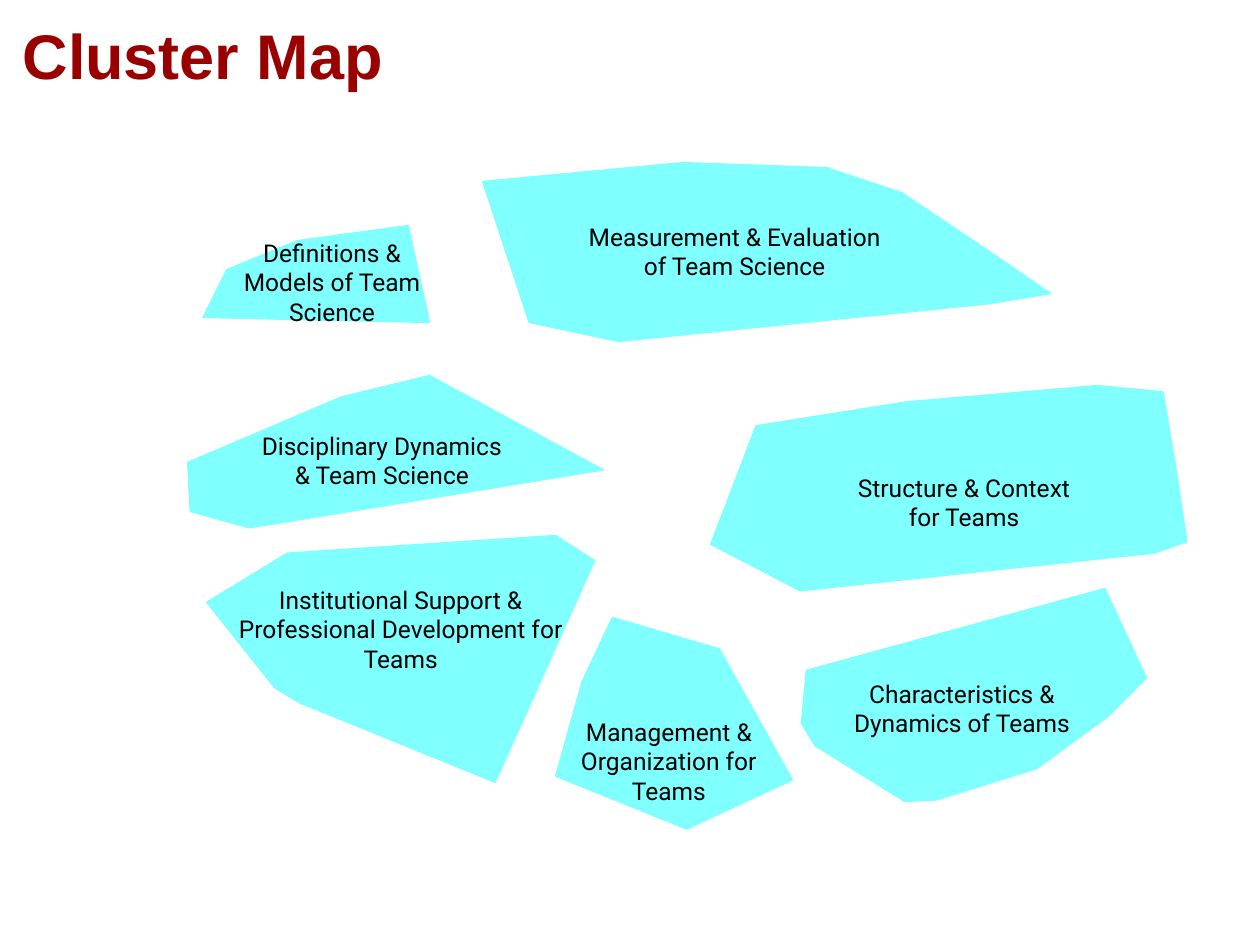
import pptx
import pptx.dml.color
import pptx.enum.text
import pptx.util

Cm = pptx.util.Cm
Pt = pptx.util.Pt
RGBColor = pptx.dml.color.RGBColor

DARK_RED = RGBColor(0x99, 0x00, 0x00)
CYAN = RGBColor(0x80, 0xFF, 0xFF)
BLACK = RGBColor(0x00, 0x00, 0x00)
OUTLINE_UNIT = Cm(2.54) / 100

CLUSTERS = [
    ("Management & Organization for Teams", (11.02, 14.45, 4.93, 1.8),
     [(441, 616), (545, 658), (629, 619), (571, 515), (486, 490), (462, 541)]),
    ("Characteristics & Dynamics of Teams", (16.97, 13.69, 4.85, 1.19),
     [(636, 574), (647, 592), (718, 636), (743, 635), (823, 610), (879, 569),
      (910, 538), (877, 467), (640, 532)]),
    ("Definitions & Models of Team Science", (4.47, 4.8, 4.45, 1.8),
     [(161, 252), (341, 256), (324, 179), (236, 191), (180, 214)]),
    ("Institutional Support & Professional Development for Teams",
     (4.7, 11.79, 6.76, 1.8),
     [(164, 478), (218, 546), (238, 558), (393, 621), (472, 445), (441, 425),
      (228, 439)]),
    ("Disciplinary Dynamics & Team Science", (5.11, 8.69, 5.18, 1.19),
     [(149, 367), (151, 406), (198, 419), (479, 373), (341, 298), (271, 315)]),
    ("Measurement & Evaluation of Team Science", (11.66, 4.47, 6.3, 1.19),
     [(383, 144), (420, 256), (491, 271), (786, 241), (834, 233), (780, 196),
      (716, 153), (656, 133), (542, 129)]),
    ("Structure & Context for Teams", (17.25, 9.53, 4.37, 1.19),
     [(564, 432), (635, 469), (916, 439), (942, 430), (933, 370), (923, 311),
      (871, 306), (719, 319), (600, 338)]),
]


class ClusterMap:
    title_font = "Arial"
    label_font = "Roboto"

    def __init__(self, slide):
        self.slide = slide

    def format_text(self, paragraph, name, size, color, alignment):
        paragraph.alignment = alignment
        paragraph.font.name = name
        paragraph.font.size = Pt(size)
        paragraph.font.color.rgb = color

    def title(self, text, box):
        shape = self.slide.shapes.title
        shape.left, shape.top, shape.width, shape.height = map(Cm, box)
        frame = shape.text_frame
        frame.text = text
        frame.vertical_anchor = pptx.enum.text.MSO_ANCHOR.MIDDLE
        paragraph = frame.paragraphs[0]
        self.format_text(paragraph, self.title_font, 36, DARK_RED,
                         pptx.enum.text.PP_ALIGN.LEFT)
        paragraph.font.bold = True

    def region(self, points):
        builder = self.slide.shapes.build_freeform(*points[0], scale=OUTLINE_UNIT)
        builder.add_line_segments(points[1:], close=True)
        shape = builder.convert_to_shape()
        shape.shadow.inherit = False
        shape.fill.solid()
        shape.fill.fore_color.rgb = CYAN
        shape.line.color.rgb = CYAN
        shape.line.width = Pt(0)

    def label(self, text, box):
        frame = self.slide.shapes.add_textbox(*map(Cm, box)).text_frame
        frame.margin_left = frame.margin_right = 0
        frame.margin_top = frame.margin_bottom = 0
        frame.word_wrap = True
        frame.auto_size = pptx.enum.text.MSO_AUTO_SIZE.SHAPE_TO_FIT_TEXT
        frame.text = text
        self.format_text(frame.paragraphs[0], self.label_font, 14, BLACK,
                         pptx.enum.text.PP_ALIGN.CENTER)


def main():
    presentation = pptx.Presentation()
    presentation.slide_width = Cm(25.4)
    presentation.slide_height = Cm(19.05)
    slide = presentation.slides.add_slide(presentation.slide_layouts[5])
    cluster_map = ClusterMap(slide)
    cluster_map.title("Cluster Map", (0.2, 0.2, 24.97, 1.78))
    for text, box, points in CLUSTERS:
        cluster_map.region(points)
    for text, box, points in CLUSTERS:
        cluster_map.label(text, box)
    presentation.save("out.pptx")


if __name__ == "__main__":
    main()
